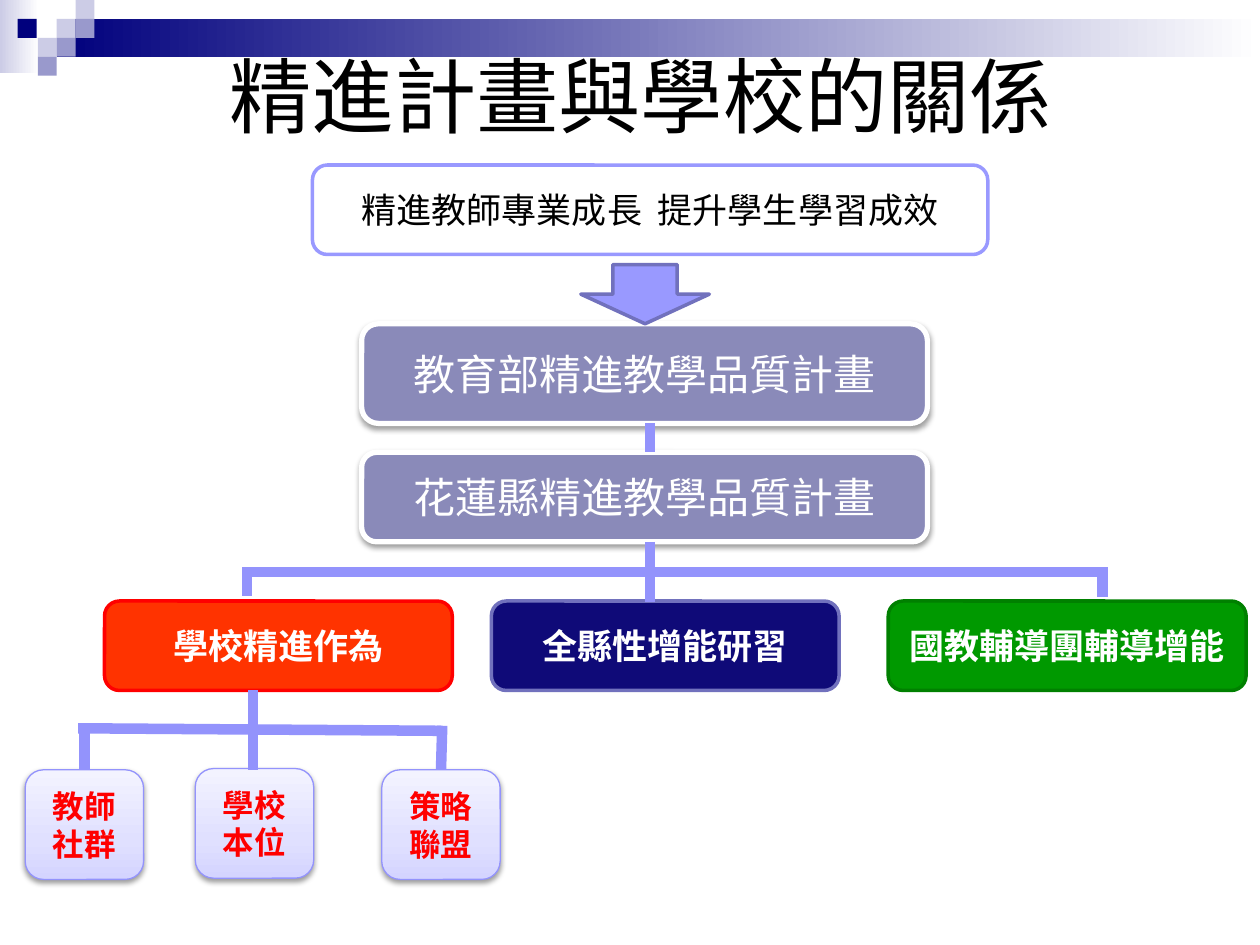
"""Build a slide relating the teaching improvement plan to schools."""
from lxml.etree import SubElement
from pptx import Presentation
from pptx.dml.color import RGBColor
from pptx.enum.shapes import MSO_CONNECTOR, MSO_SHAPE
from pptx.enum.text import MSO_ANCHOR, PP_ALIGN
from pptx.oxml import parse_xml
from pptx.oxml.ns import nsdecls, qn
from pptx.util import Inches, Pt

THEME = {
    "title_font": "Noto Sans CJK JP", "font": "Noto Sans CJK SC",
    "title": 47, "plan": 24, "body": 20, "small": 18,
    "black": "000000", "white": "FFFFFF", "red": "FF0000",
    "navy": "00007D", "pale": "CCCCE6", "mid": "9999CC",
    "periwinkle": "9999FF", "edge": "7171BD", "link": "9393FC", "slate": "8A8AB9",
}
TITLE = "精進計畫與學校的關係"
GOAL = "精進教師專業成長  提升學生學習成效"
PLANS = [("教育部精進教學品質計畫", 2.57, 0.79), ("花蓮縣精進教學品質計畫", 3.59, 0.71)]
BRANCHES = [
    ("學校精進作為", 0.83, 2.76, "FF3300", "FF0000"),
    ("全縣性增能研習", 3.9, 2.76, "0F0A78", "7171BD"),
    ("國教輔導團輔導增能", 7.05, 2.84, "009900", "008000"),
]
ACTIONS = [("教師社群", 0.2, 6.11), ("學校本位", 1.55, 6.1), ("策略聯盟", 3.03, 6.11)]
ACTION_FILL = [(0, "D4D4FF"), (35, "E0E0FF"), (100, "F3F3FF")]
TILE = 0.15
TILES = [(0.45, 0.15, "pale"), (0.6, 0, "pale"), (0.6, 0.15, "mid"), (0.3, 0.3, "pale"),
         (0.14, 0.15, "navy"), (0.45, 0.3, "mid"), (0.3, 0.45, "mid")]
LINKS = [
    (5.16, 3.36, 5.16, 3.59), (5.16, 4.3, 5.16, 4.78), (1.93, 4.54, 8.78, 4.54),
    (8.75, 4.5, 8.75, 4.74), (1.96, 4.5, 1.96, 4.73), (0.62, 5.78, 3.5, 5.8),
    (0.67, 5.8, 0.67, 6.11), (2.01, 5.48, 2.01, 6.11), (3.51, 5.76, 3.5, 6.11),
]


def color(value):
    return RGBColor.from_string(THEME.get(value, value))


def paint_gradient(shape, stops, angle):
    shape.fill.gradient()
    gradient = shape.fill._fill._gradFill
    stop_list = gradient.find(qn("a:gsLst"))
    for stop in list(stop_list):
        stop_list.remove(stop)
    for position, value in stops:
        stop = SubElement(stop_list, qn("a:gs"), pos=str(position * 1000))
        SubElement(stop, qn("a:srgbClr"), val=str(color(value)))
    gradient.find(qn("a:lin")).set("ang", str(angle * 60000))


def cast_shadow(shape):
    effects = shape._element.spPr.find(qn("a:effectLst"))
    effects.append(parse_xml(
        f'<a:outerShdw {nsdecls("a")} blurRad="40000" dist="20000" dir="5400000" '
        'rotWithShape="0"><a:srgbClr val="000000"><a:alpha val="38000"/>'
        '</a:srgbClr></a:outerShdw>'))


def write(shape, text, size, ink, font, bold=False):
    frame = shape.text_frame
    frame.word_wrap = True
    frame.vertical_anchor = MSO_ANCHOR.MIDDLE
    para = frame.paragraphs[0]
    para.alignment = PP_ALIGN.CENTER
    span = para.add_run()
    span.text = text
    span.font.size = Pt(THEME[size])
    span.font.bold = bold
    span.font.name = THEME[font]
    span.font.color.rgb = color(ink)
    SubElement(span.font._element, qn("a:ea"), typeface=THEME[font])


def add_block(page, kind, place, fill, edge=None, width=2, angle=0):
    shape = page.shapes.add_shape(kind, *map(Inches, place))
    shape.shadow.inherit = False
    if isinstance(fill, list):
        paint_gradient(shape, fill, angle)
    else:
        shape.fill.solid()
        shape.fill.fore_color.rgb = color(fill)
    if edge:
        shape.line.color.rgb = color(edge)
        shape.line.width = Pt(width)
    else:
        shape.line.fill.background()
    return shape


def add_link(page, ends):
    link = page.shapes.add_connector(MSO_CONNECTOR.STRAIGHT, *map(Inches, ends))
    link.line.color.rgb = color("link")
    link.line.width = Pt(6)
    SubElement(link._element.spPr, qn("a:effectLst"))


def add_banner(page):
    for place, start in [((0, 0, 0.31, 0.58), "pale"), ((0.45, 0.15, 9.55, 0.3), "navy")]:
        add_block(page, MSO_SHAPE.RECTANGLE, place, [(0, start), (100, "white")])
    for left, top, fill in TILES:
        add_block(page, MSO_SHAPE.RECTANGLE, (left, top, TILE, TILE), fill)


def add_title(page):
    title = page.shapes.title
    title.left, title.top, title.width, title.height = map(Inches, (0.59, 0, 9, 1.5))
    write(title, TITLE, "title", "black", "title_font")
    page.shapes._spTree.append(title._element)


def add_chain(page):
    rounded = MSO_SHAPE.ROUNDED_RECTANGLE
    goal = add_block(page, rounded, (2.48, 1.31, 5.36, 0.71), "white", "periwinkle")
    write(goal, GOAL, "body", "black", "font")
    for text, top, height in PLANS:
        plan = add_block(page, rounded, (2.87, top, 4.49, height), "slate", "white", 3)
        cast_shadow(plan)
        write(plan, text, "plan", "white", "font")
    for text, left, width, fill, edge in BRANCHES:
        branch = add_block(page, rounded, (left, 4.77, width, 0.71), fill, edge)
        write(branch, text, "body", "white", "font", True)
    for text, left, top in ACTIONS:
        action = add_block(page, rounded, (left, top, 0.94, 0.87), ACTION_FILL, "link", 0.75, 270)
        cast_shadow(action)
        write(action, text, "small", "red", "font", True)
    add_block(page, MSO_SHAPE.DOWN_ARROW, (4.61, 2.1, 1.02, 0.47), "periwinkle", "edge")


def main():
    deck = Presentation()
    deck.slide_width, deck.slide_height = Inches(10), Inches(7.5)
    page = deck.slides.add_slide(deck.slide_layouts[5])
    add_banner(page)
    add_title(page)
    add_chain(page)
    for ends in LINKS:
        add_link(page, ends)
    deck.save("out.pptx")


if __name__ == "__main__":
    main()
